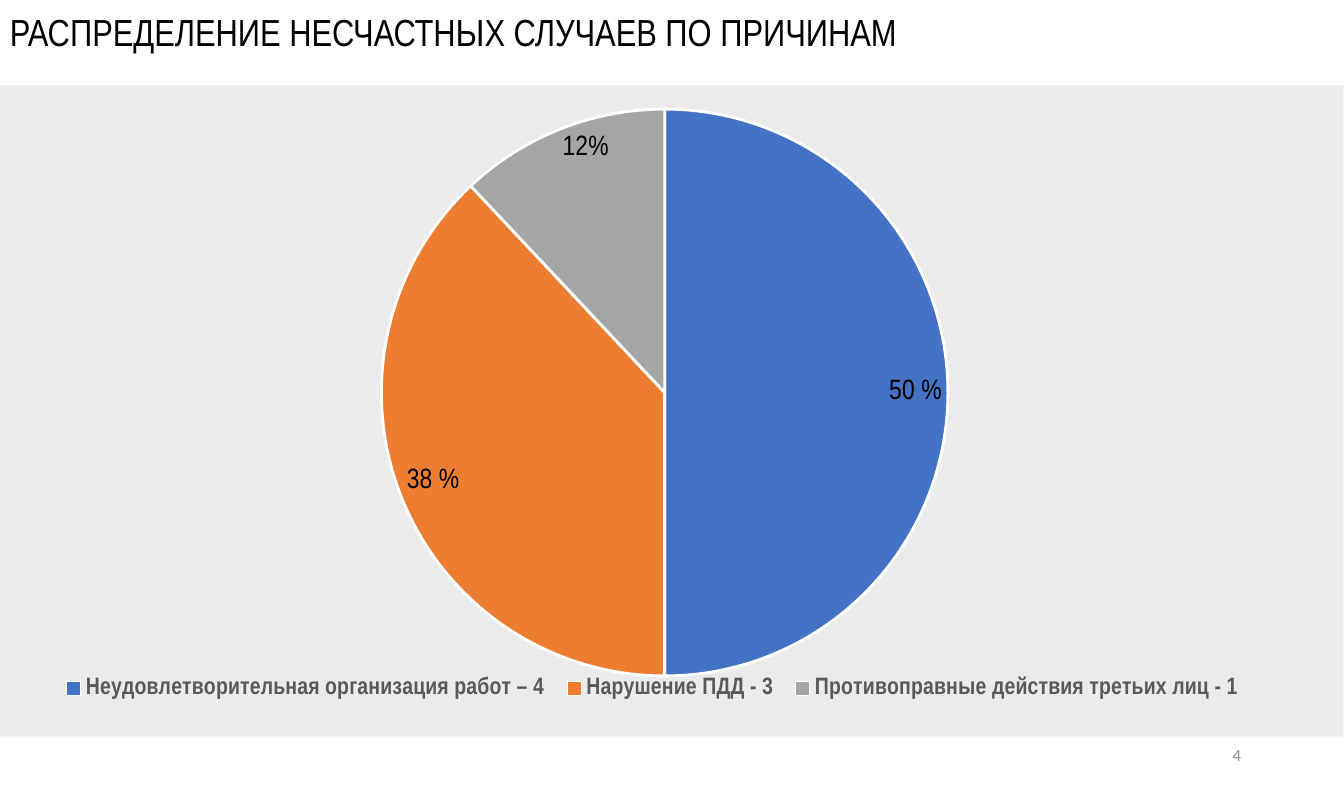
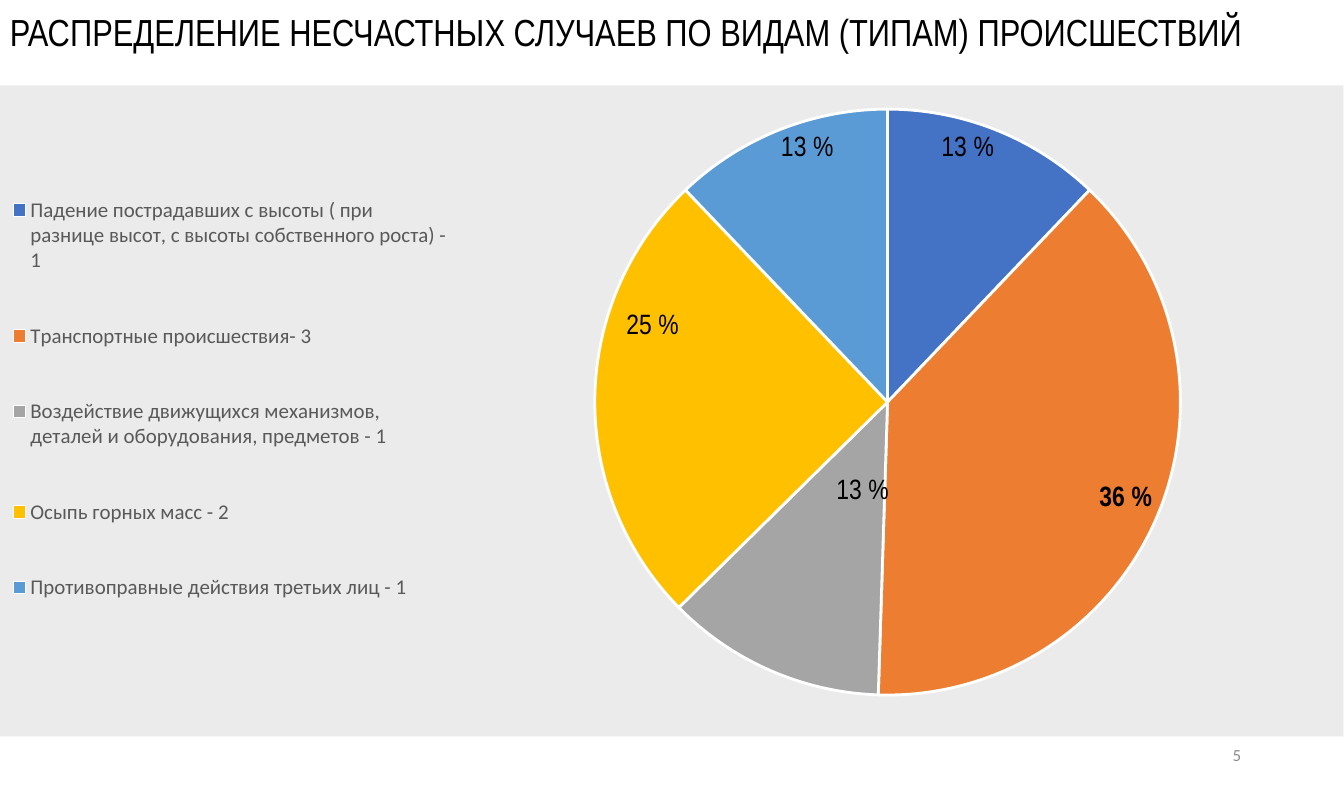
from dataclasses import dataclass

from lxml import etree
from pptx import Presentation
from pptx import util as u
from pptx.chart import data
from pptx.dml.color import RGBColor
from pptx.enum import chart as charts, shapes, text
from pptx.oxml import ns


@dataclass(frozen=True)
class Theme:
    band: str = "EBEBEB"
    ink: str = "000000"
    legend: str = "595959"
    footer: str = "8C8C8C"
    outline: str = "FFFFFF"
    slices: tuple = ("4472C4", "ED7D31", "A5A5A5", "FFC000", "5B9BD5")
    narrow: str = "Arial Narrow"
    body: str = "Calibri"
    title_size: float = 27
    label_size: float = 20
    footer_size: float = 12.1


@dataclass(frozen=True)
class Slice:
    name: str
    value: int
    label: str
    bold: bool = False
    shift: tuple = ()


def style(font, name, size, color, bold=False):
    font.name = name
    font.size = u.Pt(size)
    font.bold = bold
    font.color.rgb = RGBColor.from_string(color)


def manual_layout(target="", mode="edge", **fractions):
    layout = etree.Element(ns.qn("c:layout"))
    manual = etree.SubElement(layout, ns.qn("c:manualLayout"))
    settings = {"layoutTarget": target} if target else {}
    if mode == "edge":
        settings.update(xMode=mode, yMode=mode)
    settings.update(fractions)
    for tag, value in settings.items():
        etree.SubElement(manual, ns.qn(f"c:{tag}")).set("val", str(value))
    return layout


class Deck:
    def __init__(self, theme):
        self.theme = theme
        self.file = Presentation()
        self.file.slide_width = u.Cm(34)
        self.file.slide_height = u.Cm(20)
        self.page = None

    def add_page(self, title, number):
        theme = self.theme
        self.page = self.file.slides.add_slide(self.file.slide_layouts[6])
        self.band(0, 0.85, 13.38, 6.48)
        self.text(title, (0, 0.04, 13.72, 0.56), theme.narrow, theme.title_size, theme.ink)
        footer = self.text(str(number), (9.45, 7.3, 3.01, 0.42), theme.body,
                           theme.footer_size, theme.footer)
        footer.vertical_anchor = text.MSO_ANCHOR.MIDDLE
        footer.paragraphs[0].alignment = text.PP_ALIGN.RIGHT

    def band(self, *place):
        box = self.page.shapes.add_shape(shapes.MSO_SHAPE.RECTANGLE, *map(u.Inches, place))
        box.shadow.inherit = False
        box.fill.solid()
        box.fill.fore_color.rgb = RGBColor.from_string(self.theme.band)
        box.line.fill.background()

    def text(self, words, place, font, size, color):
        frame = self.page.shapes.add_textbox(*map(u.Inches, place)).text_frame
        frame.word_wrap = True
        frame.text = words
        style(frame.paragraphs[0].runs[0].font, font, size, color)
        return frame

    def pie(self, slices, place, plot):
        theme = self.theme
        table = data.CategoryChartData()
        table.categories = [part.name for part in slices]
        table.add_series("Series 1", [part.value for part in slices])
        chart = self.page.shapes.add_chart(
            charts.XL_CHART_TYPE.PIE, *map(u.Inches, place), table).chart
        style(chart.font, theme.body, 10, theme.ink)
        chart.has_title = False
        pie = chart.plots[0]
        pie.vary_by_categories = True
        pie.has_data_labels = True
        labels = pie.data_labels
        labels.show_value = False
        labels.show_percentage = True
        labels.number_format = "0%"
        labels.number_format_is_linked = False
        labels.position = charts.XL_LABEL_POSITION.INSIDE_END
        style(labels.font, theme.narrow, theme.label_size, theme.ink, True)
        for index, part in enumerate(slices):
            self.slice(pie.series[0].points[index], part, theme.slices[index])
        area = chart.element.find(".//" + ns.qn("c:plotArea"))
        for layout in area.findall(ns.qn("c:layout")):
            area.remove(layout)
        area.insert(0, manual_layout("inner", **plot))
        return chart

    def slice(self, point, part, color):
        theme = self.theme
        point.format.fill.solid()
        point.format.fill.fore_color.rgb = RGBColor.from_string(color)
        point.format.line.color.rgb = RGBColor.from_string(theme.outline)
        point.format.line.width = u.Pt(2)
        label = point.data_label
        label.text_frame.text = part.label
        span = label.text_frame.paragraphs[0].runs[0]
        style(span.font, theme.narrow, theme.label_size, theme.ink, part.bold)
        label.position = charts.XL_LABEL_POSITION.INSIDE_END
        if part.shift:
            across, down = part.shift
            index = span._r.xpath("ancestor::c:dLbl/c:idx")[0]
            index.addnext(manual_layout(mode="factor", x=across, y=down))

    def legend(self, chart, side, font, size, bold, layout):
        chart.has_legend = True
        legend = chart.legend
        legend.position = side
        legend.include_in_layout = False
        style(legend.font, font, size, self.theme.legend, bold)
        side_tag = chart.element.find(".//" + ns.qn("c:legendPos"))
        for old in side_tag.getparent().findall(ns.qn("c:layout")):
            side_tag.getparent().remove(old)
        side_tag.addnext(manual_layout(**layout))


theme = Theme()
deck = Deck(theme)

deck.add_page("РАСПРЕДЕЛЕНИЕ НЕСЧАСТНЫХ СЛУЧАЕВ ПО ПРИЧИНАМ", 4)
causes = deck.pie(
    [Slice("Неудовлетворительная организация работ – 4", 50, "50 %"),
     Slice("Нарушение ПДД - 3", 38, "38 %"),
     Slice("Противоправные действия третьих лиц - 1", 12, "12%")],
    (0.52, 0.96, 12.2, 6.34), dict(x=0.26, y=0.02, w=0.48, h=0.89))
deck.legend(causes, charts.XL_LEGEND_POSITION.BOTTOM, theme.narrow, 17, True,
            dict(x=0, y=0.9, w=0.98, h=0.06))

deck.add_page("РАСПРЕДЕЛЕНИЕ НЕСЧАСТНЫХ СЛУЧАЕВ ПО ВИДАМ (ТИПАМ) ПРОИСШЕСТВИЙ", 5)
kinds = deck.pie(
    [Slice("Падение пострадавших с высоты ( при разнице высот, "
           "с высоты собственного роста) - 1", 12, "13 %"),
     Slice("Транспортные происшествия- 3", 38, "36 %", bold=True),
     Slice("Воздействие движущихся механизмов, деталей и оборудования, "
           "предметов - 1", 12, "13 %", shift=(0.05, -0.25)),
     Slice("Осыпь горных масс - 2", 25, "25 %", shift=(0.02, -0.11)),
     Slice("Противоправные действия третьих лиц - 1", 12, "13 %")],
    (0, 0.96, 12.72, 6.34), dict(x=0.46, y=0.02, w=0.47, h=0.92))
deck.legend(kinds, charts.XL_LEGEND_POSITION.LEFT, theme.body, 15, False,
            dict(x=0.01, y=0.08, w=0.34, h=0.79))

deck.file.save("out.pptx")
